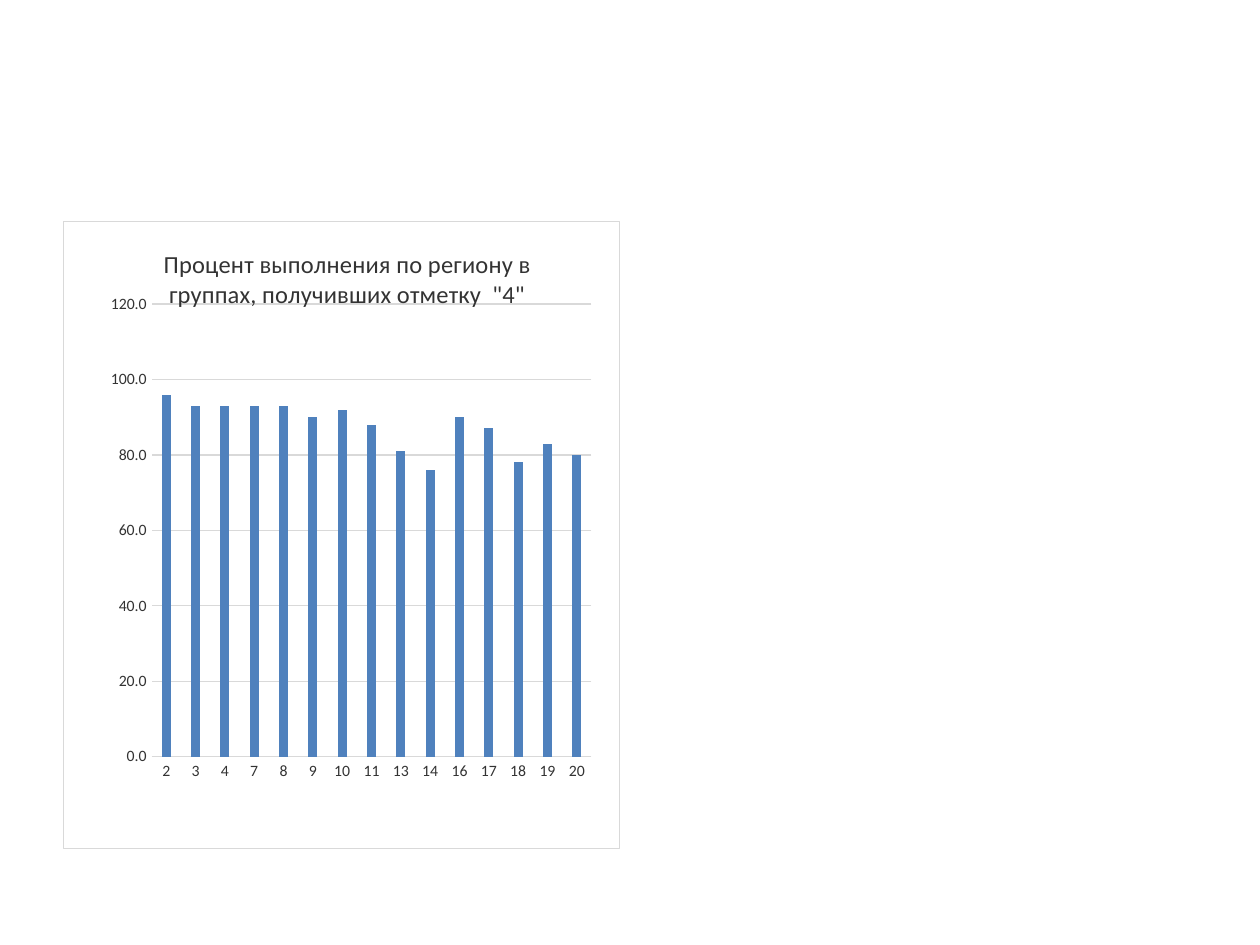
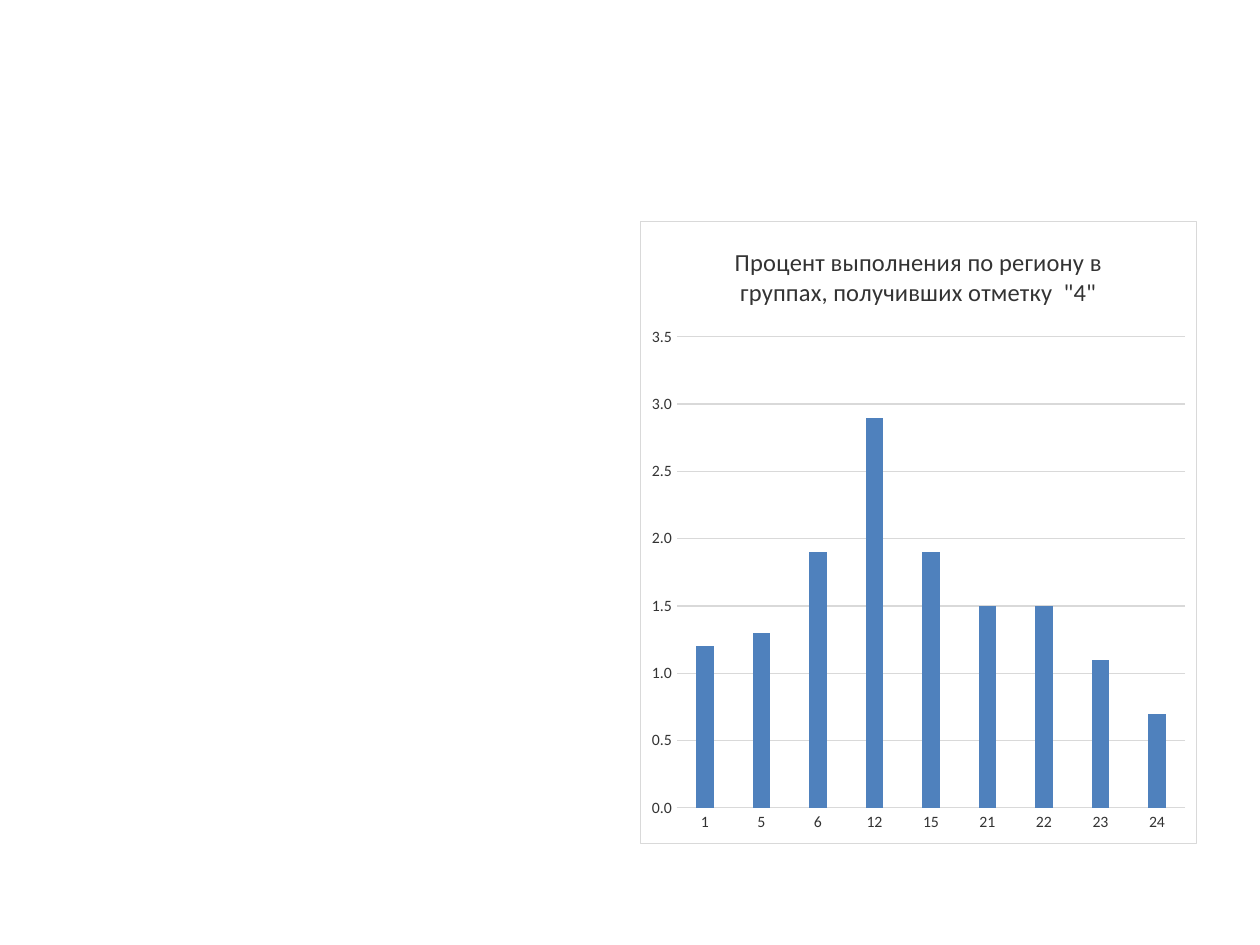
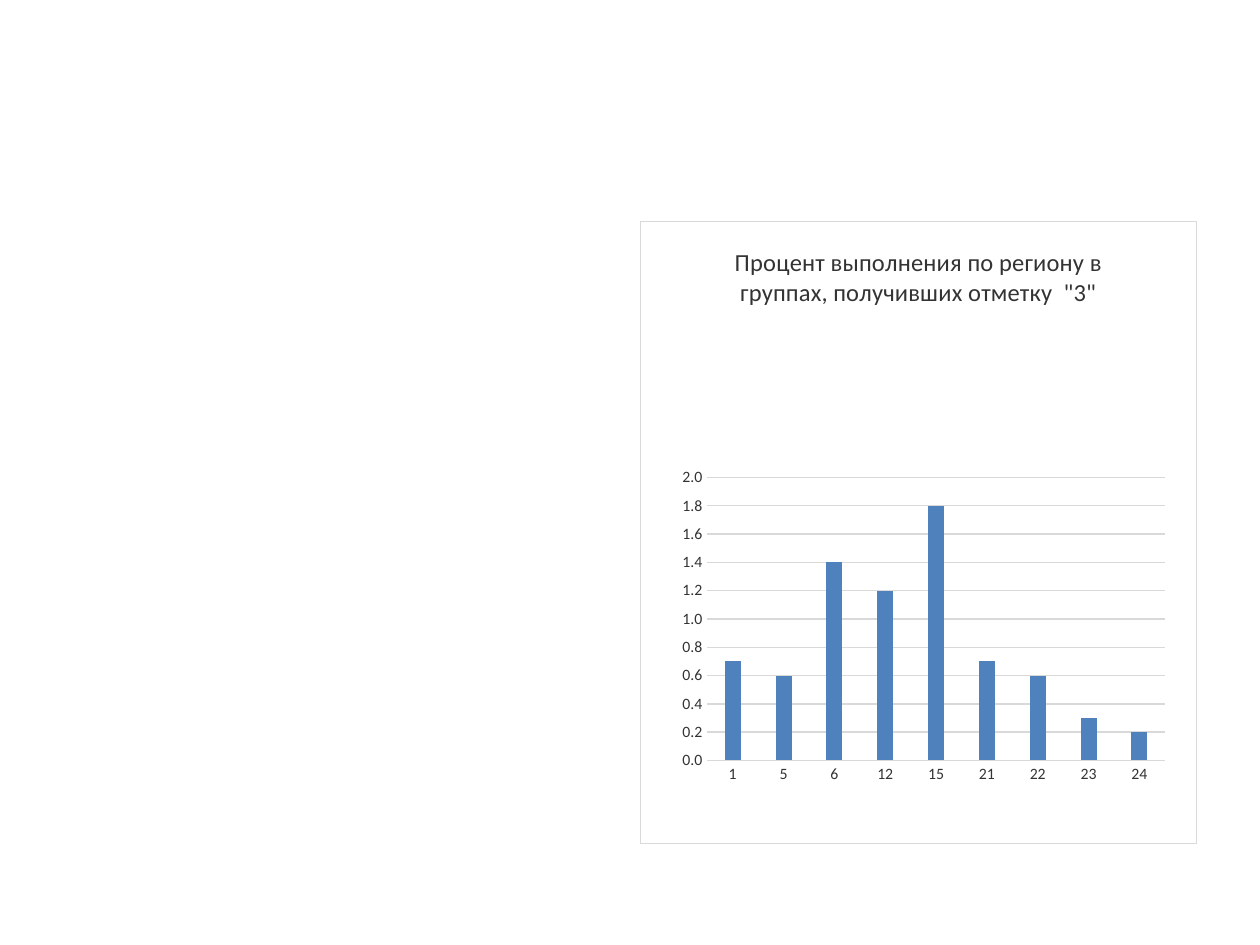
from lxml.etree import SubElement
from pptx import Presentation
from pptx.chart.data import CategoryChartData
from pptx.dml.color import RGBColor
from pptx.enum.chart import XL_CHART_TYPE, XL_TICK_MARK
from pptx.oxml import parse_xml
from pptx.oxml.ns import nsdecls, qn
from pptx.util import Inches, Pt

COLORS = {"bar": "4F81BD", "line": "D9D9D9", "text": "333333", "paper": "FFFFFF"}
FONT = "Calibri"
LEFT_BOX = (0.5, 1.75, 4.42, 4.99)
RIGHT_BOX = (5.08, 1.75, 4.42, 4.95)
BASIC_TASKS = ["2", "3", "4", "7", "8", "9", "10", "11", "13", "14", "16", "17", "18", "19", "20"]
SCORED_TASKS = ["1", "5", "6", "12", "15", "21", "22", "23", "24"]

CHART_SLIDES = [
    {
        "box": LEFT_BOX,
        "mark": 4,
        "tasks": BASIC_TASKS,
        "results": [96, 93, 93, 93, 93, 90, 92, 88, 81, 76, 90, 87, 78, 83, 80],
        "scale": (120, 20),
        "plot": (0.7, 0.66, 3.5, 3.6),
        "title_corner": (0.76, 0.17),
    },
    {
        "box": RIGHT_BOX,
        "mark": 4,
        "tasks": SCORED_TASKS,
        "results": [1.2, 1.3, 1.9, 2.9, 1.9, 1.5, 1.5, 1.1, 0.7],
        "scale": (3.5, 0.5),
    },
    {
        "box": RIGHT_BOX,
        "mark": 3,
        "tasks": SCORED_TASKS,
        "results": [0.7, 0.6, 1.4, 1.2, 1.8, 0.7, 0.6, 0.3, 0.2],
        "scale": (2, 0.2),
        "plot": (0.53, 2.04, 3.64, 2.25),
    },
]


def color(name):
    return RGBColor.from_string(COLORS[name])


def style_font(font, size):
    font.name = FONT
    font.size = Pt(size)
    font.bold = False
    font.color.rgb = color("text")


def style_line(line):
    line.color.rgb = color("line")
    line.width = Pt(0.75)


def add_frame(chart):
    frame = parse_xml(
        f'<c:spPr {nsdecls("c", "a")}>'
        f'<a:solidFill><a:srgbClr val="{COLORS["paper"]}"/></a:solidFill>'
        f'<a:ln w="{Pt(0.75)}"><a:solidFill><a:srgbClr val="{COLORS["line"]}"/></a:solidFill></a:ln>'
        "</c:spPr>"
    )
    chart.element.find(qn("c:chart")).addnext(frame)


def place_part(part, index, settings, lengths, box):
    for layout in part.findall(qn("c:layout")):
        part.remove(layout)
    layout = parse_xml(f'<c:layout {nsdecls("c")}/>')
    part.insert(index, layout)
    manual = SubElement(layout, qn("c:manualLayout"))
    width, height = box[2:]
    fractions = [length / side for length, side in zip(lengths, (width, height) * 2)]
    for tag, value in settings + list(zip("xywh", fractions)):
        SubElement(manual, qn(f"c:{tag}")).set("val", str(value))


def style_axes(chart, scale):
    for axis in (chart.category_axis, chart.value_axis):
        axis.major_tick_mark = XL_TICK_MARK.NONE
        axis.minor_tick_mark = XL_TICK_MARK.NONE
        style_font(axis.tick_labels.font, 9)
    style_line(chart.category_axis.format.line)
    value_axis = chart.value_axis
    value_axis.minimum_scale = 0
    value_axis.maximum_scale, value_axis.major_unit = scale
    value_axis.tick_labels.number_format = "0.0"
    value_axis.tick_labels.number_format_is_linked = False
    value_axis.format.line.fill.background()
    style_line(value_axis.major_gridlines.format.line)


def add_title(chart, mark):
    chart.has_title = True
    paragraph = chart.chart_title.text_frame.paragraphs[0]
    run = paragraph.add_run()
    run.text = f'Процент выполнения по региону в группах, получивших отметку  "{mark}"'
    style_font(run.font, 14)


def add_result_chart(slide, box, mark, tasks, results, scale, plot=None, title_corner=None):
    data = CategoryChartData(number_format="0.0")
    data.categories = tasks
    data.add_series("Series 1", results)
    chart = slide.shapes.add_chart(
        XL_CHART_TYPE.COLUMN_CLUSTERED, *map(Inches, box), data
    ).chart
    chart.has_legend = False
    style_font(chart.font, 10)
    add_title(chart, mark)
    style_axes(chart, scale)
    bars = chart.plots[0]
    bars.gap_width = 219
    bars.overlap = -27
    bars.vary_by_categories = False
    fill = bars.series[0].format.fill
    fill.solid()
    fill.fore_color.rgb = color("bar")
    add_frame(chart)
    edges = [("xMode", "edge"), ("yMode", "edge")]
    chart_body = chart.element.find(qn("c:chart"))
    if plot:
        plot_area = chart_body.find(qn("c:plotArea"))
        place_part(plot_area, 0, [("layoutTarget", "inner")] + edges, plot, box)
    if title_corner:
        place_part(chart_body.find(qn("c:title")), 1, edges, title_corner, box)


def main():
    presentation = Presentation()
    presentation.slide_width = Inches(10)
    presentation.slide_height = Inches(7.5)
    for chart_slide in CHART_SLIDES:
        slide = presentation.slides.add_slide(presentation.slide_layouts[6])
        add_result_chart(slide, **chart_slide)
    presentation.save("out.pptx")


if __name__ == "__main__":
    main()
